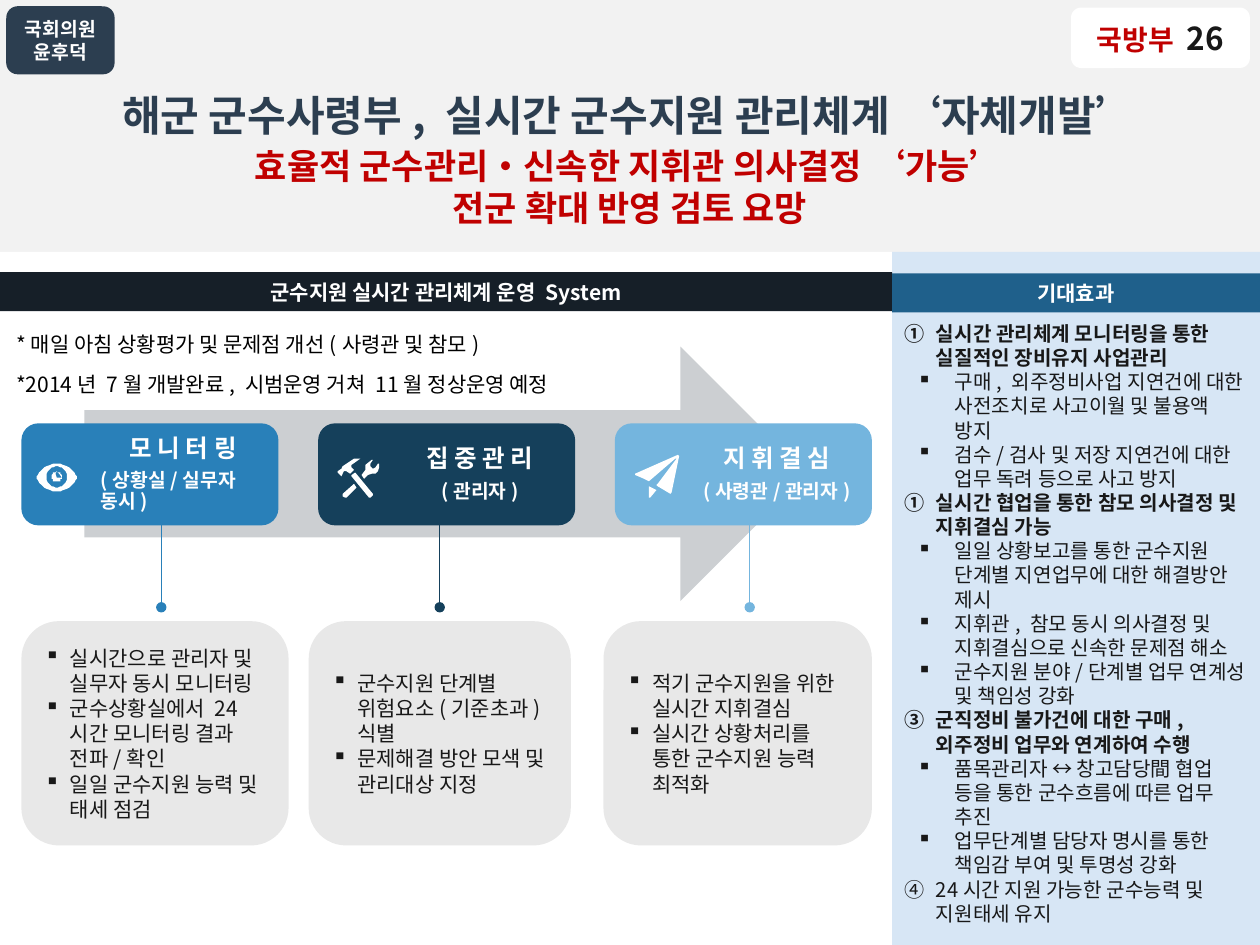
import math
from lxml import etree
from pptx import Presentation, util as u
from pptx.dml.color import RGBColor
from pptx.enum import shapes, text
from pptx.oxml import ns

FONT = "Noto Sans CJK KR"
COLORS = {
    "page": "F9F9F9", "header": "F2F2F2", "white": "FFFFFF", "navy": "2C3E50",
    "red": "C00000", "ink": "181818", "black": "000000", "arrow": "CCCFD2",
    "blue": "2980B9", "deep": "15405B", "sky": "74B5DE", "card": "E8E8E8",
    "bar": "161F28", "panel": "D7E6F5", "panel_bar": "1F608B",
}
RGB = {name: RGBColor.from_string(value) for name, value in COLORS.items()}
RECT = shapes.MSO_SHAPE.RECTANGLE
ROUND = shapes.MSO_SHAPE.ROUNDED_RECTANGLE
ARROW = shapes.MSO_SHAPE.RIGHT_ARROW
CENTER, LEFT = text.PP_ALIGN.CENTER, text.PP_ALIGN.LEFT
MIDDLE, TOP = text.MSO_ANCHOR.MIDDLE, text.MSO_ANCHOR.TOP

presentation = Presentation()
presentation.slide_width, presentation.slide_height = u.Inches(10), u.Inches(7.5)
slide = presentation.slides.add_slide(presentation.slide_layouts[6])
slide.background.fill.solid()
slide.background.fill.fore_color.rgb = RGB["page"]

# Grid of 100 columns and 75 rows
COLUMN = presentation.slide_width / 100
ROW = presentation.slide_height / 75


def add_box(kind, left, top, width, height, fill=None):
    """Place a preset shape, or a text box when kind is None."""
    area = [int(v) for v in (left * COLUMN, top * ROW, width * COLUMN, height * ROW)]
    if kind is None:
        return slide.shapes.add_textbox(*area)
    shape = slide.shapes.add_shape(kind, *area)
    shape.shadow.inherit = False
    shape.fill.solid()
    shape.fill.fore_color.rgb = RGB[fill]
    shape.line.fill.background()
    return shape


def write(shape, lines, frame_format=None, **paragraph_format):
    """Each line: (runs, bullet); run: (words, size, color, bold); bullet: (mark, start, margin, hang)."""
    frame = shape.text_frame
    frame_values = {"word_wrap": True, "vertical_anchor": MIDDLE, **(frame_format or {})}
    for name, value in frame_values.items():
        setattr(frame, name, value)
    for index, (runs, bullet) in enumerate(lines):
        paragraph = frame.add_paragraph() if index else frame.paragraphs[0]
        for name, value in {"alignment": CENTER, **paragraph_format}.items():
            setattr(paragraph, name, value)
        if bullet:
            mark, start, margin, hang = bullet
            properties = paragraph._p.get_or_add_pPr()
            properties.set("marL", str(int(margin * COLUMN)))
            properties.set("indent", str(int(-hang * COLUMN)))
            if mark:
                etree.SubElement(properties, ns.qn("a:buChar"), char=mark)
            else:
                number = etree.SubElement(properties, ns.qn("a:buAutoNum"), type="circleNumDbPlain")
                if start > 1:
                    number.set("startAt", str(start))
        for words, size, color, bold in runs:
            run = paragraph.add_run()
            run.text = words
            for name, value in {"name": FONT, "size": u.Pt(size), "bold": bold}.items():
                setattr(run.font, name, value)
            run.font.color.rgb = RGB[color]
            etree.SubElement(run._r.get_or_add_rPr(), ns.qn("a:ea"), typeface=FONT)


# Header band, name badge and titles
add_box(RECT, 0, 0, 100, 20, "header")
write(add_box(ROUND, 0.5, 0.5, 8.6, 5.4, "navy"),
      [([(words, 11, "white", True)], None) for words in ("국회의원", "윤후덕")])
add_box(RECT, 0, 20, 70.8, 55, "white")
write(add_box(None, 0, 6.6, 100, 5),
      [([("해군 군수사령부, 실시간 군수지원 관리체계 ‘자체개발’", 24, "navy", True)], None)])
write(add_box(None, 0, 11, 100, 8),
      [([(words, 20, "red", True)], None) for words in
       ("효율적 군수관리•신속한 지휘관 의사결정 ‘가능’", "전군 확대 반영 검토 요망")],
      {"vertical_anchor": TOP})

# Flow arrow
add_box(ARROW, 6.7, 27.5, 57.4, 20.2, "arrow")

# Three steps: step box, connector and detail card
STEP_LEFT, STEP_PITCH = 1.7, 23.55
STEPS = [
    ("blue", "모 니 터 링", "(상황실/실무자 동시)", LEFT, 12.8, (1.7, 21.2),
     ["실시간으로 관리자 및 실무자 동시 모니터링",
      "군수상황실에서 24시간 모니터링 결과 전파/확인",
      "일일 군수지원 능력 및 태세 점검"]),
    ("deep", "집 중 관 리", "(관리자)", CENTER, 34.9, (24.5, 20.8),
     ["군수지원 단계별 위험요소(기준초과) 식별",
      "문제해결 방안 모색 및 관리대상 지정"]),
    ("sky", "지 휘 결 심", "(사령관/관리자)", CENTER, 59.5, (47.9, 21.3),
     ["적기 군수지원을 위한 실시간 지휘결심",
      "실시간 상황처리를 통한 군수지원 능력 최적화"]),
]
INSETS = {"margin_left": int(5.9 * COLUMN), "margin_right": int(0.6 * COLUMN),
          "margin_top": int(0.6 * ROW), "margin_bottom": int(0.6 * ROW)}
for index, (color, name, actor, actor_alignment, line_x, card, details) in enumerate(STEPS):
    left = STEP_LEFT + index * STEP_PITCH
    add_box(ROUND, left, 33.6, 20.4, 8.1, color)
    label = add_box(None, left + 0.4, 34, 19.6, 7.3)
    write(label, [([(name, 14, "white", True)], None), ([(actor, 11, "white", True)], None)],
          INSETS, line_spacing=0.9, space_after=u.Pt(5))
    label.text_frame.paragraphs[1].alignment = actor_alignment

    card_left, card_width = card
    write(add_box(ROUND, card_left, 49.3, card_width, 17.8, "card"),
          [([(words, 12, "ink", False)], ("▪", 1, 2, 2)) for words in details], alignment=LEFT)

    x = int(line_x * COLUMN)
    connector = slide.shapes.add_connector(
        shapes.MSO_CONNECTOR.STRAIGHT, x, int(41.6 * ROW), x, int(48.2 * ROW))
    connector.line.color.rgb = RGB[color]
    connector.line.width = u.Pt(0.75)
    etree.SubElement(connector.line._get_or_add_ln(), ns.qn("a:tailEnd"), type="oval")
    etree.SubElement(connector._element.spPr, ns.qn("a:effectLst"))

# Step icons, in tenths of a column
TURN = [math.tau * step / 36 for step in range(36)]
eye = [[(45 + 16 * math.cos(a), 379 + 11 * math.sin(a) * abs(math.sin(a)) ** 0.4) for a in TURN]]
eye += [[(45 + r * math.cos(a), 378.5 + r * math.sin(a)) for a in TURN] for r in (8.2, 4)]
eye += [[(45, 379), (44.5, 376), (45, 374.5), (47, 375.5), (49, 379)]]
tools = [
    [(273, 374), (275, 374), (278, 376), (281, 373), (279, 371), (279, 369), (286, 364),
     (281, 364), (275, 368), (272, 370), (271, 372), (268, 374), (268, 375), (270, 377),
     (271, 378), (272, 376)],
    [(282, 375), (279, 377), (279, 378), (293, 395), (294, 395), (296, 393), (296, 392)],
    [(301, 368), (300, 368), (298, 371), (296, 372), (294, 370), (294, 368), (296, 365),
     (295, 365), (290, 369), (290, 373), (287, 377), (289, 380), (292, 377), (295, 376),
     (298, 376), (300, 374), (301, 371)],
    [(272, 392), (272, 394), (274, 395), (275, 395), (283, 387), (281, 384)],
]
plane = [
    [(538, 361), (504, 376), (504, 377), (511, 380), (515, 382), (536, 364), (537, 364),
     (522, 384), (521, 385), (522, 386), (532, 392), (533, 391), (539, 362)],
    [(515, 395), (516, 395), (521, 389), (515, 386)],
]
for outlines in (eye, tools, plane):
    builder = slide.shapes.build_freeform(*outlines[0][0], scale=COLUMN / 10)
    builder.add_line_segments(outlines[0][1:], close=True)
    for outline in outlines[1:]:
        builder.move_to(*outline[0])
        builder.add_line_segments(outline[1:], close=True)
    icon = builder.convert_to_shape()
    icon.shadow.inherit = False
    icon.fill.solid()
    icon.fill.fore_color.rgb = RGB["white"]
    icon.line.fill.background()

# Notes above the flow
write(add_box(None, 0.3, 24.6, 50, 7.5),
      [([(words, 12, "black", False)], None) for words in
       ("*매일 아침 상황평가 및 문제점 개선(사령관 및 참모)",
        "*2014년 7월 개발완료, 시범운영 거쳐 11월 정상운영 예정")],
      {"vertical_anchor": TOP}, alignment=LEFT, line_spacing=1.6)

# Expected effects: number, heading, bold, details
EFFECTS = [
    (1, "실시간 관리체계 모니터링을 통한 실질적인 장비유지 사업관리", True,
     ["구매, 외주정비사업 지연건에 대한 사전조치로 사고이월 및 불용액 방지",
      "검수/검사 및 저장 지연건에 대한 업무 독려 등으로 사고 방지"]),
    (1, "실시간 협업을 통한 참모 의사결정 및 지휘결심 가능", True,
     ["일일 상황보고를 통한 군수지원 단계별 지연업무에 대한 해결방안 제시",
      "지휘관, 참모 동시 의사결정 및 지휘결심으로 신속한 문제점 해소",
      "군수지원 분야/단계별 업무 연계성 및 책임성 강화"]),
    (3, "군직정비 불가건에 대한 구매, 외주정비 업무와 연계하여 수행", True,
     ["품목관리자 ↔ 창고담당間 협업 등을 통한 군수흐름에 따른 업무 추진",
      "업무단계별 담당자 명시를 통한 책임감 부여 및 투명성 강화"]),
    (4, "24시간 지원 가능한 군수능력 및 지원태세 유지", False, []),
]
effect_lines = []
for number, heading, bold, details in EFFECTS:
    effect_lines.append(([(heading, 11.5, "ink", bold)], (None, number, 2.5, 2.5)))
    effect_lines += [([(words, 11.5, "ink", False)], ("▪", 1, 4, 3)) for words in details]
write(add_box(RECT, 70.8, 20, 29.2, 55, "panel"), effect_lines,
      {"vertical_anchor": TOP, "margin_top": int(5.5 * ROW)}, alignment=LEFT)

# Section bars and page badge
for left, top, width, fill, words in (
        (0, 21.6, 70.8, "bar", "군수지원 실시간 관리체계 운영 System"),
        (70.8, 21.7, 29.2, "panel_bar", "기대효과")):
    write(add_box(RECT, left, top, width, 3.1, fill), [([(words, 12, "white", True)], None)])
write(add_box(ROUND, 85, 0.6, 14.2, 4.8, "white"),
      [([("국방부 ", 16, "red", True), ("26", 18, "ink", True)], None)])

presentation.save("out.pptx")
